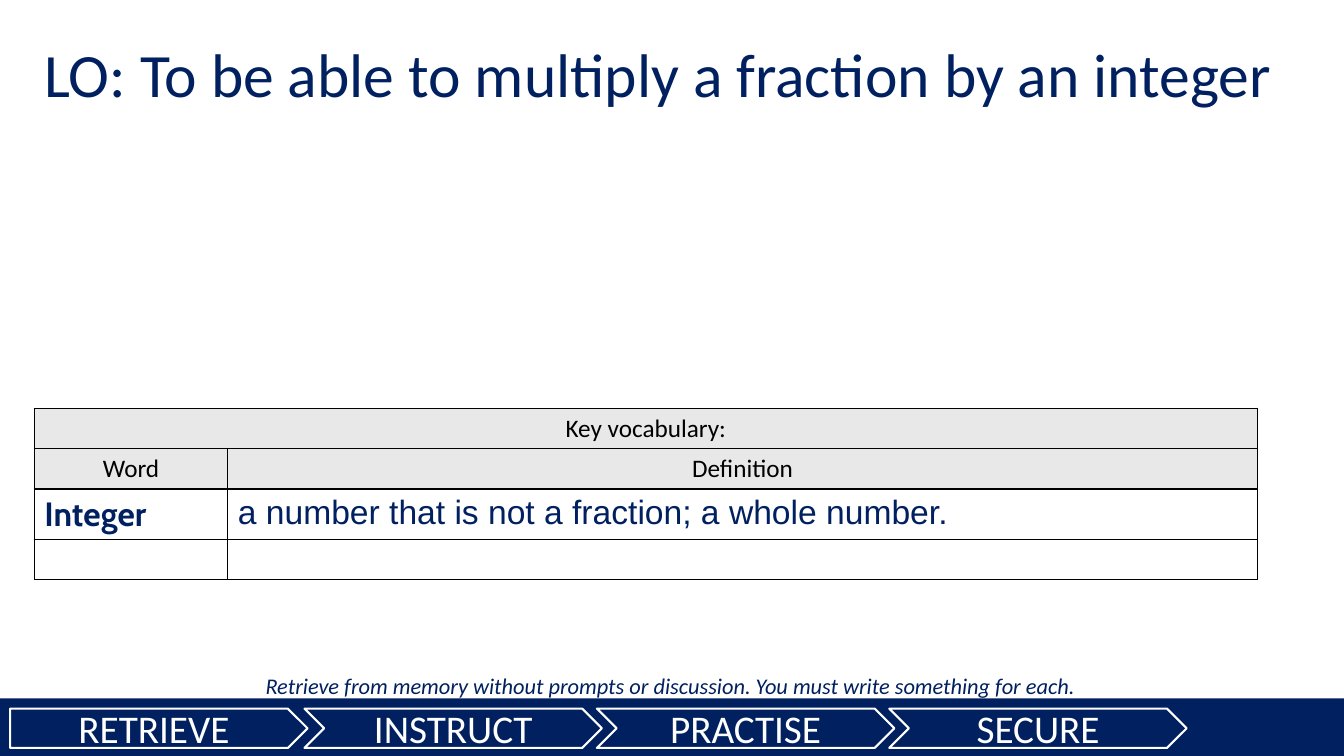
from lxml import etree
from pptx import Presentation
from pptx.dml.color import RGBColor
from pptx.enum import shapes, text
from pptx.oxml import ns
from pptx.util import Inches, Pt

NAVY, WHITE, BLACK, GREY = "002060", "FFFFFF", "000000", "E8E8E8"
KINDS = shapes.MSO_SHAPE
LEFT, MID = text.PP_ALIGN.LEFT, text.PP_ALIGN.CENTER


def color(code):
    return RGBColor.from_string(code)


def paint(item, code):
    item.fill.solid()
    item.fill.fore_color.rgb = color(code)


def border(cell):
    """Give all four sides of a cell a thin black line."""
    props = cell._tc.get_or_add_tcPr()
    for spot, side in enumerate(("lnL", "lnR", "lnT", "lnB")):
        line = etree.Element(ns.qn(f"a:{side}"), w=str(Pt(1)))
        fill = etree.SubElement(line, ns.qn("a:solidFill"))
        etree.SubElement(fill, ns.qn("a:srgbClr"), val=BLACK)
        props.insert(spot, line)


class Deck:
    """Holds the text style and the current slide."""

    def __init__(self):
        self.show = Presentation()
        self.show.slide_width = Inches(13.33)
        self.show.slide_height = Inches(7.5)
        self.style = {"name": "Calibri", "size": 18}
        self.slide = self.show.slides.add_slide(self.show.slide_layouts[5])

    def label(self, frame, words, tint, align=LEFT, **extra):
        para = frame.paragraphs[0]
        para.alignment = align
        run = para.add_run()
        run.text = words
        run.font.color.rgb = color(tint)
        for key, value in {**self.style, **extra}.items():
            setattr(run.font, key, Pt(value) if key == "size" else value)

    def title(self, words, box):
        head = self.slide.shapes.title
        head.left, head.top, head.width, head.height = map(Inches, box)
        frame = head.text_frame
        frame.word_wrap = True
        frame.auto_size = text.MSO_AUTO_SIZE.NONE
        frame.vertical_anchor = text.MSO_ANCHOR.TOP
        self.label(frame, words, NAVY, size=44)

    def note(self, words, box):
        frame = self.slide.shapes.add_textbox(*map(Inches, box)).text_frame
        frame.word_wrap = True
        self.label(frame, words, NAVY, MID, size=16, italic=True)

    def shape(self, kind, box, words=""):
        """Add a navy shape, outlined in white when it has words."""
        item = self.slide.shapes.add_shape(kind, *map(Inches, box))
        item.shadow.inherit = False
        paint(item, NAVY)
        if not words:
            item.line.fill.background()
            return
        item.line.color.rgb = color(WHITE)
        item.line.width = Pt(1.5)
        item.text_frame.vertical_anchor = text.MSO_ANCHOR.MIDDLE
        self.label(item.text_frame, words, WHITE, MID, size=28)

    def table(self, rows, widths, box):
        """Fill a table whose first two rows are headings."""
        grid = self.slide.shapes.add_table(
            len(rows), len(widths), *map(Inches, box)).table
        for col, width in zip(grid.columns, widths):
            col.width = Inches(width)
        for i, row in enumerate(rows):
            grid.rows[i].height = Inches(0.4)
            for j, (words, form) in enumerate(row):
                cell = grid.cell(i, j)
                top = i < 2
                paint(cell, GREY if top else WHITE)
                border(cell)
                if words:
                    self.label(cell.text_frame, words, BLACK if top else NAVY,
                               MID if top else LEFT, **form)
        grid.cell(0, 0).merge(grid.cell(0, len(widths) - 1))


def main():
    deck = Deck()
    deck.note("Retrieve from memory without prompts or discussion. "
              "You must write something for each.", (0.12, 6.62, 13.06, 0.37))
    deck.shape(KINDS.RECTANGLE, (0, 6.93, 13.33, 0.57))
    steps = ("RETRIEVE", "INSTRUCT", "PRACTISE", "SECURE")
    for i, step in enumerate(steps):
        kind = KINDS.CHEVRON if i else KINDS.PENTAGON
        left = 3.02 + 2.9 * (i - 1) if i else 0.1
        deck.shape(kind, (left, 7.03, 2.95, 0.39), step)
    deck.title("LO: To be able to multiply a fraction by an integer",
               (0.34, 0.31, 12.56, 0.84))
    blank = ("", {})
    rows = [
        [("Key vocabulary:", {}), blank],
        [("Word", {}), ("Definition", {})],
        [("Integer", {"name": "Cabin", "size": 24, "bold": True}),
         ("a number that is not a fraction; a whole number.",
          {"name": "Arial", "size": 24})],
        [blank, blank],
    ]
    deck.table(rows, (1.92, 10.21), (0.34, 4.05, 12.13, 1.6))
    deck.show.save("out.pptx")


if __name__ == "__main__":
    main()
